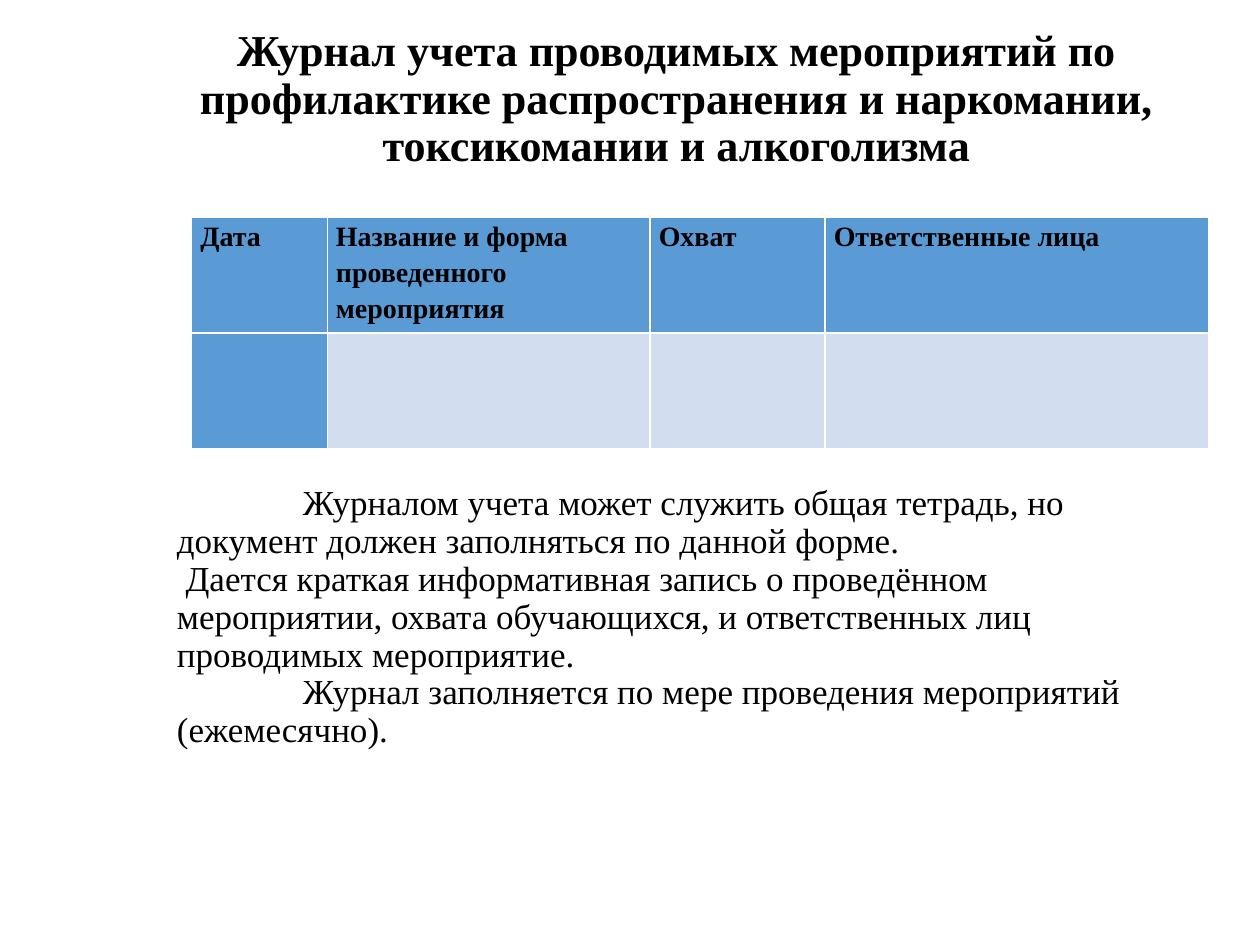
"""Build a slide with the form of an event log and notes on how to fill it in."""
from pptx import Presentation
from pptx.dml.color import RGBColor as Rgb
from pptx.enum.text import MSO_ANCHOR as Anchor, PP_ALIGN as Align
from pptx.util import Pt


def color(code):
    return Rgb.from_string(code)


def write(par, text, size=20, bold=False, space=0.9, align=Align.LEFT, indent=0):
    par.alignment = align
    par.line_spacing = space
    par.space_before = par.space_after = Pt(0)
    if indent:
        par._p.get_or_add_pPr().set("indent", str(Pt(indent)))
    run = par.add_run()
    run.text = text
    font = run.font
    font.name = "Times New Roman"
    font.size = Pt(size)
    font.bold = bold
    font.color.rgb = color("000000")


deck = Presentation()
deck.slide_width, deck.slide_height = Pt(720), Pt(540)
slide = deck.slides.add_slide(deck.slide_layouts[5])

title = slide.shapes.title
title.left, title.top, title.width, title.height = Pt(88), Pt(9), Pt(597), Pt(96)
title.text_frame.vertical_anchor = Anchor.MIDDLE
title.text_frame.word_wrap = True
write(title.text_frame.paragraphs[0],
      "Журнал учета проводимых мероприятий по профилактике распространения "
      "и наркомании, токсикомании и алкоголизма",
      size=25.2, bold=True, align=Align.CENTER)

heads = ["Дата", "Название и форма проведенного мероприятия", "Охват",
         "Ответственные лица"]
widths = [77.5, 184.5, 100, 219]
table = slide.shapes.add_table(2, len(heads), Pt(109.5), Pt(124),
                               Pt(sum(widths)), Pt(132.5)).table
table.first_col = True
for row in table.rows:
    row.height = Pt(66.25)
for col, (head, width) in enumerate(zip(heads, widths)):
    table.columns[col].width = Pt(width)
    for row in range(2):
        cell = table.cell(row, col)
        cell.margin_left = cell.margin_right = Pt(5)
        cell.margin_top = cell.margin_bottom = Pt(0)
        cell.fill.solid()
        cell.fill.fore_color.rgb = color("D2DEEF" if row and col else "5B9BD5")
    write(table.cell(0, col).text_frame.paragraphs[0], head,
          size=16, bold=True, space=1.15)

notes = [
    (72, "Журналом учета может служить общая тетрадь, но документ должен "
         "заполняться по данной форме."),
    (5, "Дается краткая информативная запись о проведённом мероприятии, охвата "
        "обучающихся, и ответственных лиц проводимых мероприятие."),
    (72, "Журнал заполняется по мере проведения мероприятий (ежемесячно)."),
]
body = slide.shapes.add_textbox(Pt(94), Pt(274), Pt(590), Pt(208)).text_frame
body.word_wrap = True
for num, (indent, text) in enumerate(notes):
    par = body.add_paragraph() if num else body.paragraphs[0]
    write(par, text, indent=indent)

deck.save("out.pptx")
